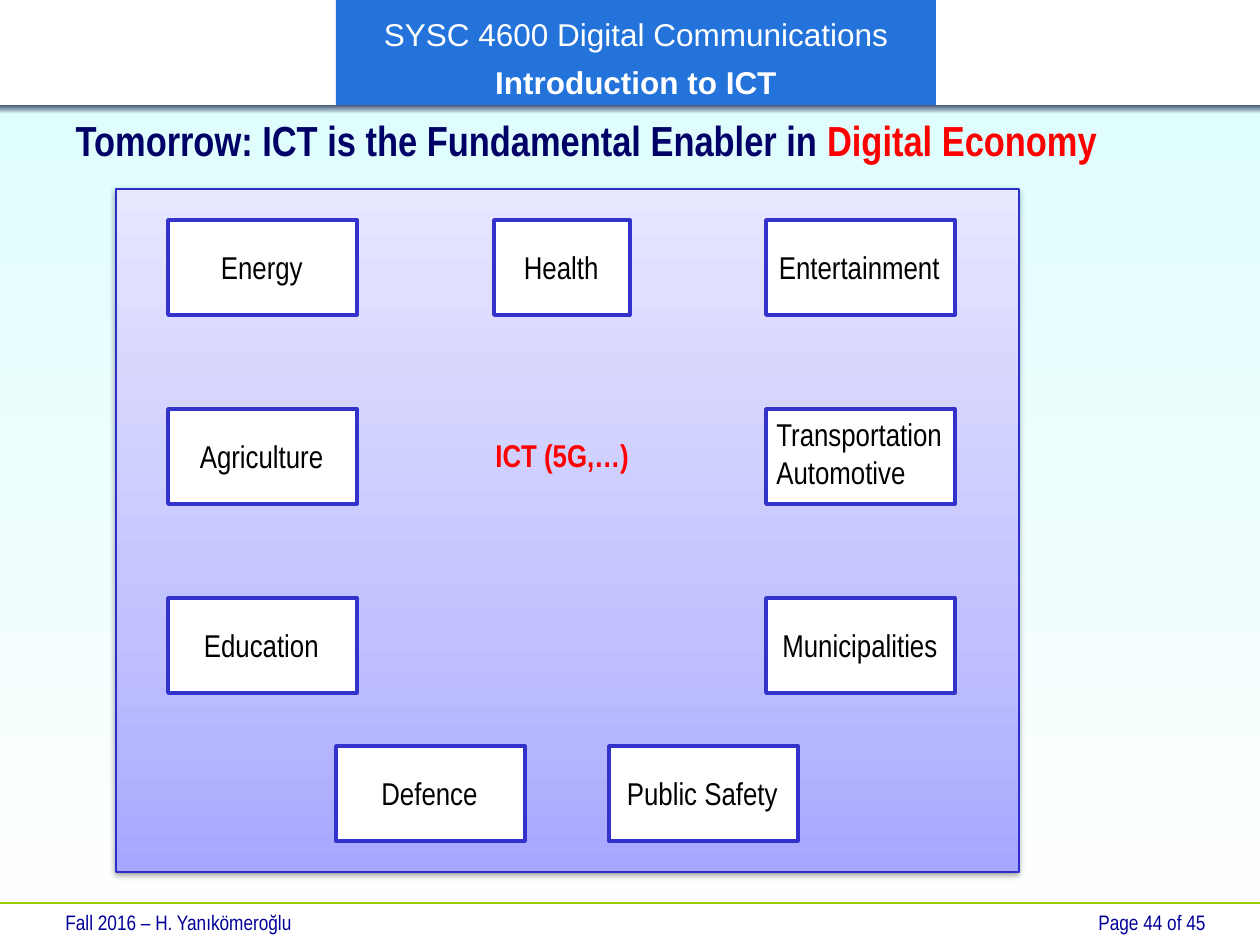
from copy import deepcopy

from lxml import etree
from pptx import Presentation
from pptx.dml.color import RGBColor
from pptx.enum import shapes, text
from pptx.oxml.ns import qn
from pptx.util import Emu, Pt

PX = 914400 / 126
NARROW = "Arial Narrow"
WHITE = RGBColor(0xFF, 0xFF, 0xFF)
BLACK = RGBColor(0x00, 0x00, 0x00)
RED = RGBColor(0xFF, 0x00, 0x00)
NAVY = RGBColor(0x00, 0x00, 0x66)
FOOTER_BLUE = RGBColor(0x00, 0x00, 0x99)
BANNER_BLUE = RGBColor(0x24, 0x73, 0xDB)
BOX_BLUE = RGBColor(0x33, 0x33, 0xCC)
PANEL_BLUE = RGBColor(0x2E, 0x2E, 0xCB)
GREEN = RGBColor(0x99, 0xCC, 0x00)
SLATE = RGBColor(0x47, 0x55, 0x77)
AQUA = RGBColor(0xDF, 0xFD, 0xFD)
LILACS = [(0, RGBColor(0xA7, 0xA7, 0xFF)), (35, RGBColor(0xC1, 0xC1, 0xFF)),
          (100, RGBColor(0xE7, 0xE7, 0xFF))]

BANNER = ["SYSC 4600 Digital Communications", "Introduction to ICT"]
TITLE = [("Tomorrow: ICT is the Fundamental Enabler in ", NAVY), ("Digital Economy", RED)]
FOOTERS = [
    ("Fall 2016 – H. Yanıkömeroğlu", (53, 903, 399, 42), text.PP_ALIGN.LEFT),
    ("Page 44 of 45", (945, 903, 273, 32), text.PP_ALIGN.RIGHT),
]

BOX_W, HEALTH_W, BOX_H = 189, 136, 95
LEFT, MIDDLE, RIGHT = 168, 494, 766
ROWS = [220, 409, 598, 746]
# label, box left, row, box width, label width
SECTORS = [
    ("Energy", LEFT, 0, BOX_W, 108),
    ("Health", MIDDLE, 0, HEALTH_W, 101),
    ("Entertainment", RIGHT, 0, BOX_W, 188),
    ("Agriculture", LEFT, 1, BOX_W, 150),
    ("Transportation\nAutomotive", RIGHT, 1, BOX_W, 193),
    ("Education", LEFT, 2, BOX_W, 142),
    ("Municipalities", RIGHT, 2, BOX_W, 181),
    ("Defence", 336, 3, BOX_W, 123),
    ("Public Safety", 609, 3, BOX_W, 178),
]


def px(*values):
    return [Emu(round(value * PX)) for value in values]


def add_rect(page, frame, color=None, line=None, width=0):
    box = page.shapes.add_shape(shapes.MSO_SHAPE.RECTANGLE, *px(*frame))
    box.shadow.inherit = False
    if color is not None:
        box.fill.solid()
        box.fill.fore_color.rgb = color
    if line is None:
        box.line.fill.background()
    else:
        box.line.color.rgb = line
        box.line.width = Pt(width)
    return box


def fill_gradient(box, stops, angle):
    """Blend the (percent, colour) stops; the angle runs counter-clockwise."""
    box.fill.gradient()
    box.fill.gradient_angle = angle
    stop_list = box._element.spPr.find(".//" + qn("a:gsLst"))
    while len(stop_list) < len(stops):
        stop_list.append(deepcopy(stop_list[0]))
    for stop, (percent, color) in zip(box.fill.gradient_stops, stops):
        stop.position = percent / 100
        stop.color.rgb = color


def add_shadow(box):
    effects = box._element.spPr.find(qn("a:effectLst"))
    shadow = etree.SubElement(effects, qn("a:outerShdw"), blurRad=str(Pt(3.1)),
                              dist=str(Pt(1.6)), dir="5400000", rotWithShape="0")
    color = etree.SubElement(shadow, qn("a:srgbClr"), val="000000")
    etree.SubElement(color, qn("a:alpha"), val="38000")


def format_font(font, size, color, bold=False, name=NARROW):
    font.name, font.size, font.bold = name, Pt(size), bold
    font.color.rgb = color


def add_label(page, frame, words, size, color, bold=False, wrap=False,
              align=text.PP_ALIGN.LEFT):
    label = page.shapes.add_textbox(*px(*frame)).text_frame
    label.word_wrap = wrap
    label.text = words
    for para in label.paragraphs:
        para.alignment = align
        for span in para.runs:
            format_font(span.font, size, color, bold)


def add_frame(page):
    """Banner, background and footer."""
    banner = add_rect(page, (336, 0, 600, 105), BANNER_BLUE).text_frame
    banner.word_wrap = False
    banner.margin_top = px(13)[0]
    banner.vertical_anchor = text.MSO_ANCHOR.MIDDLE
    banner.text = "\n".join(BANNER)
    for index, para in enumerate(banner.paragraphs):
        para.alignment = text.PP_ALIGN.CENTER
        para.line_spacing = 1.1
        if index:
            para.space_before = Pt(4)
        format_font(para.runs[0].font, 18, WHITE, index > 0, "Arial")

    fill_gradient(add_rect(page, (0, 107, 1260, 838)), [(0, AQUA), (100, WHITE)], 270)
    rule = page.shapes.add_connector(shapes.MSO_CONNECTOR.STRAIGHT, *px(0, 903, 1260, 903))
    rule.line.color.rgb = GREEN
    rule.line.width = Pt(0.75)
    etree.SubElement(rule._element.spPr, qn("a:effectLst"))
    for words, frame, align in FOOTERS:
        add_label(page, frame, words, 12, FOOTER_BLUE, wrap=True, align=align)
    fill_gradient(add_rect(page, (0, 105, 1260, 9)), [(0, SLATE), (100, AQUA)], 270)


def add_title(page):
    title = page.shapes.title
    title.left, title.top, title.width, title.height = px(63, 113, 1144, 53)
    title.text_frame.vertical_anchor = text.MSO_ANCHOR.MIDDLE
    para = title.text_frame.paragraphs[0]
    para.alignment = text.PP_ALIGN.LEFT
    for words, color in TITLE:
        span = para.add_run()
        span.text = words
        format_font(span.font, 24, color, True)
    page.shapes._spTree.append(title._element)  # in front of the background


def add_sectors(page):
    panel = add_rect(page, (116, 189, 903, 683), line=PANEL_BLUE, width=0.75)
    fill_gradient(panel, LILACS, 90)
    add_shadow(panel)
    for words, left, row, width, label_width in SECTORS:
        top = ROWS[row]
        add_rect(page, (left, top, width, BOX_H), WHITE, BOX_BLUE, 2)
        lines = words.count("\n") + 1
        label_top = top + 22 if lines == 1 else top
        label_left = left + (width - label_width) / 2
        add_label(page, (label_left, label_top, label_width, 12 + 38 * lines),
                  words, 18, BLACK)
    add_label(page, (483, 430, 160, 50), "ICT (5G,…)", 18, RED, bold=True)


def main():
    deck = Presentation()
    deck.slide_width, deck.slide_height = px(1260, 945)
    page = deck.slides.add_slide(deck.slide_layouts[5])
    add_frame(page)
    add_title(page)
    add_sectors(page)
    deck.save("out.pptx")


if __name__ == "__main__":
    main()
